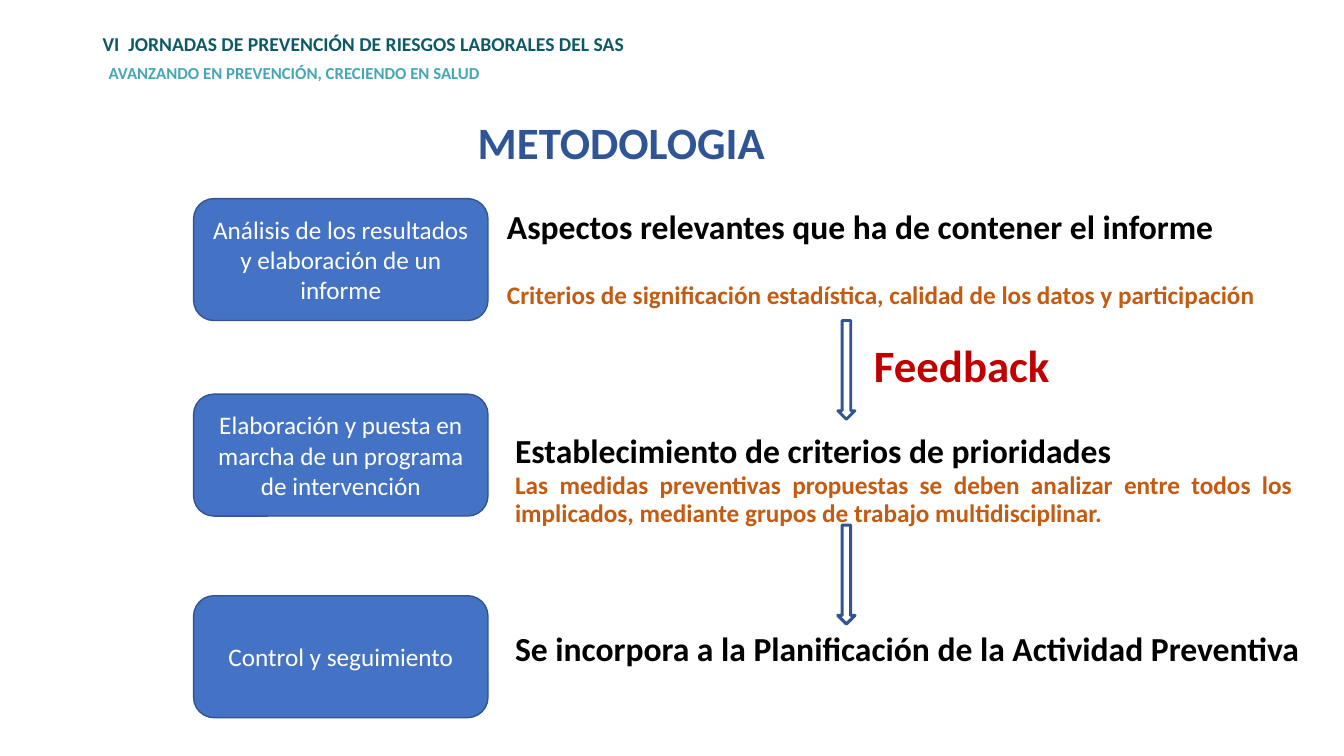
from dataclasses import dataclass

from pptx import Presentation
from pptx.dml.color import RGBColor
from pptx.enum import shapes, text
from pptx.util import Inches, Pt

COLORS = {
    "event": "0E5966",
    "motto": "46A6B6",
    "title": "2F5597",
    "step": "4472C4",
    "outline": "325491",
    "white": "FFFFFF",
    "black": "000000",
    "criteria": "C55A11",
    "feedback": "C00000",
}
FONT = "Calibri"


@dataclass
class Line:
    words: str
    size: float
    color: str
    bold: bool = True
    align: text.PP_ALIGN = text.PP_ALIGN.LEFT
    spacing: float | Pt = 0.9
    before: float = 0
    indent: float = 0


@dataclass
class TextBlock:
    left: float
    top: float
    width: float
    height: float
    lines: list[Line]
    anchor: text.MSO_ANCHOR = text.MSO_ANCHOR.MIDDLE


@dataclass
class Arrow:
    top: float
    weight: float


def rgb(name: str) -> RGBColor:
    return RGBColor.from_string(COLORS[name])


def write_lines(frame, lines: list[Line], anchor: text.MSO_ANCHOR) -> None:
    frame.word_wrap = True
    frame.vertical_anchor = anchor
    for index, line in enumerate(lines):
        paragraph = frame.add_paragraph() if index else frame.paragraphs[0]
        paragraph.text = line.words
        paragraph.alignment = line.align
        paragraph.line_spacing = line.spacing
        if line.before:
            paragraph.space_before = Pt(line.before)
        if line.indent:
            paragraph._p.get_or_add_pPr().set("marL", str(Inches(line.indent)))
        font = paragraph.font
        font.name, font.size, font.bold = FONT, Pt(line.size), line.bold
        font.color.rgb = rgb(line.color)


def add_text_block(slide, block: TextBlock) -> None:
    box = slide.shapes.add_textbox(Inches(block.left), Inches(block.top),
                                   Inches(block.width), Inches(block.height))
    write_lines(box.text_frame, block.lines, block.anchor)


def add_step(slide, top: float, words: str) -> None:
    step = slide.shapes.add_shape(shapes.MSO_SHAPE.ROUNDED_RECTANGLE,
                                  Inches(1.92), Inches(top), Inches(2.92), Inches(1.21))
    step.shadow.inherit = False
    step.fill.solid()
    step.fill.fore_color.rgb = rgb("step")
    step.line.color.rgb = rgb("outline")
    step.line.width = Pt(1)
    label = Line(words, 18, "white", bold=False, align=text.PP_ALIGN.CENTER, spacing=1.0)
    write_lines(step.text_frame, [label], text.MSO_ANCHOR.MIDDLE)


def add_down_arrow(slide, arrow: Arrow) -> None:
    shape = slide.shapes.add_shape(shapes.MSO_SHAPE.DOWN_ARROW,
                                   Inches(8.31), Inches(arrow.top), Inches(0.17), Inches(0.98))
    shape.shadow.inherit = False
    shape.fill.background()
    shape.line.color.rgb = rgb("outline")
    shape.line.width = Pt(arrow.weight)


STEPS = {
    1.97: "Análisis de los resultados y elaboración de un informe",
    3.91: "Elaboración y puesta en marcha de un programa de intervención",
    5.91: "Control y seguimiento",
}
ARROWS = [Arrow(3.18, 2), Arrow(5.21, 2.25)]
TEXT_BLOCKS = [
    TextBlock(0.92, 0.22, 5.47, 0.66, [
        Line("VI  JORNADAS DE PREVENCIÓN DE RIESGOS LABORALES DEL SAS", 14, "event",
             spacing=Pt(20)),
        Line("AVANZANDO EN PREVENCIÓN, CRECIENDO EN SALUD", 12, "motto",
             spacing=Pt(20), indent=0.06),
    ], text.MSO_ANCHOR.TOP),
    TextBlock(4.64, 0.88, 3.1, 1.12, [Line("METODOLOGIA", 32, "title")]),
    TextBlock(4.93, 2.02, 8.3, 1.12, [
        Line("Aspectos relevantes que ha de contener el informe", 24, "black"),
        Line("Criterios de significación estadística, calidad de los datos y participación",
             18, "criteria", before=26),
    ]),
    TextBlock(5.01, 4.26, 8.3, 0.47, [
        Line("Establecimiento de criterios de prioridades", 24, "black"),
    ]),
    TextBlock(5.01, 4.73, 7.91, 0.47, [
        Line("Las medidas preventivas propuestas se deben analizar entre todos los "
             "implicados, mediante grupos de trabajo multidisciplinar.",
             18, "criteria", align=text.PP_ALIGN.JUSTIFY),
    ]),
    TextBlock(5.01, 6.22, 8.3, 0.47, [
        Line("Se incorpora a la Planificación de la Actividad Preventiva", 24, "black"),
    ]),
    TextBlock(8.57, 3.09, 3.1, 1.12, [Line("Feedback", 32, "feedback")]),
]


def main() -> None:
    deck = Presentation()
    deck.slide_width, deck.slide_height = Inches(13.33), Inches(7.5)
    slide = deck.slides.add_slide(deck.slide_layouts[6])
    for top, words in STEPS.items():
        add_step(slide, top, words)
    for block in TEXT_BLOCKS:
        add_text_block(slide, block)
    for arrow in ARROWS:
        add_down_arrow(slide, arrow)
    deck.save("out.pptx")


if __name__ == "__main__":
    main()
